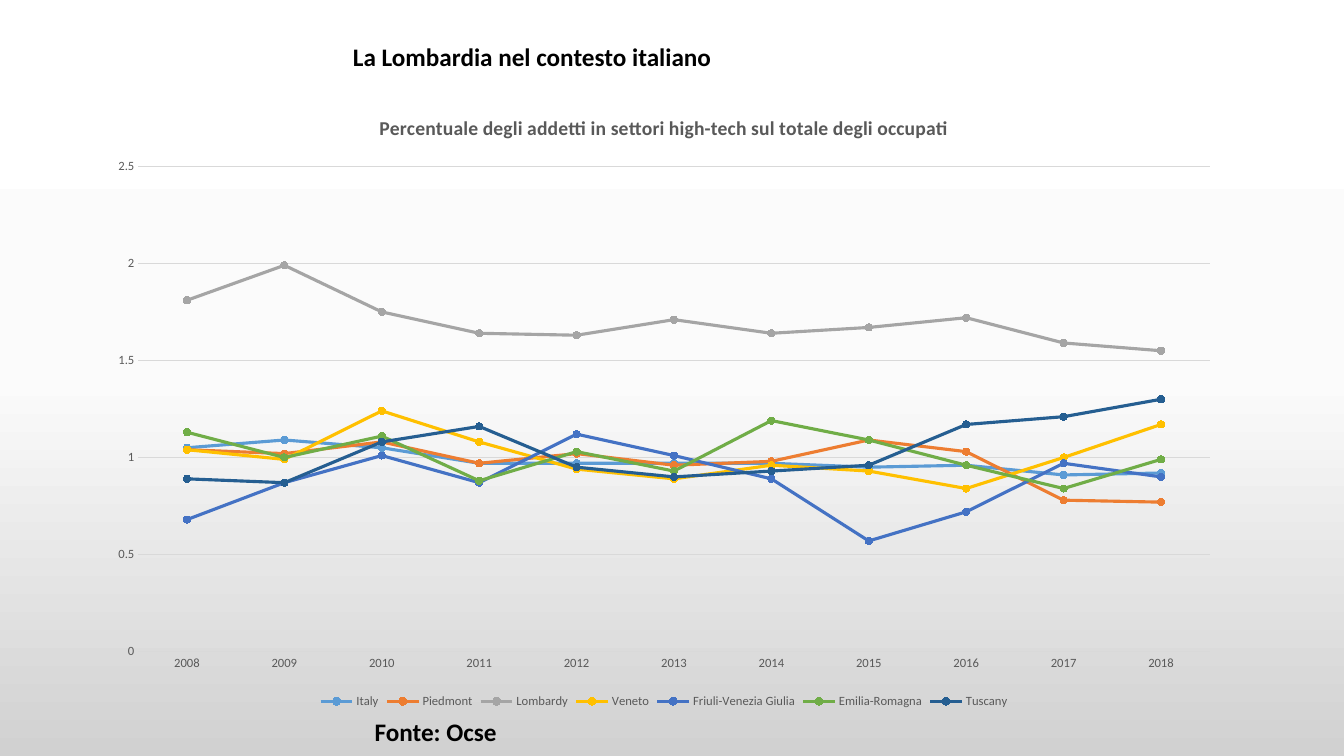
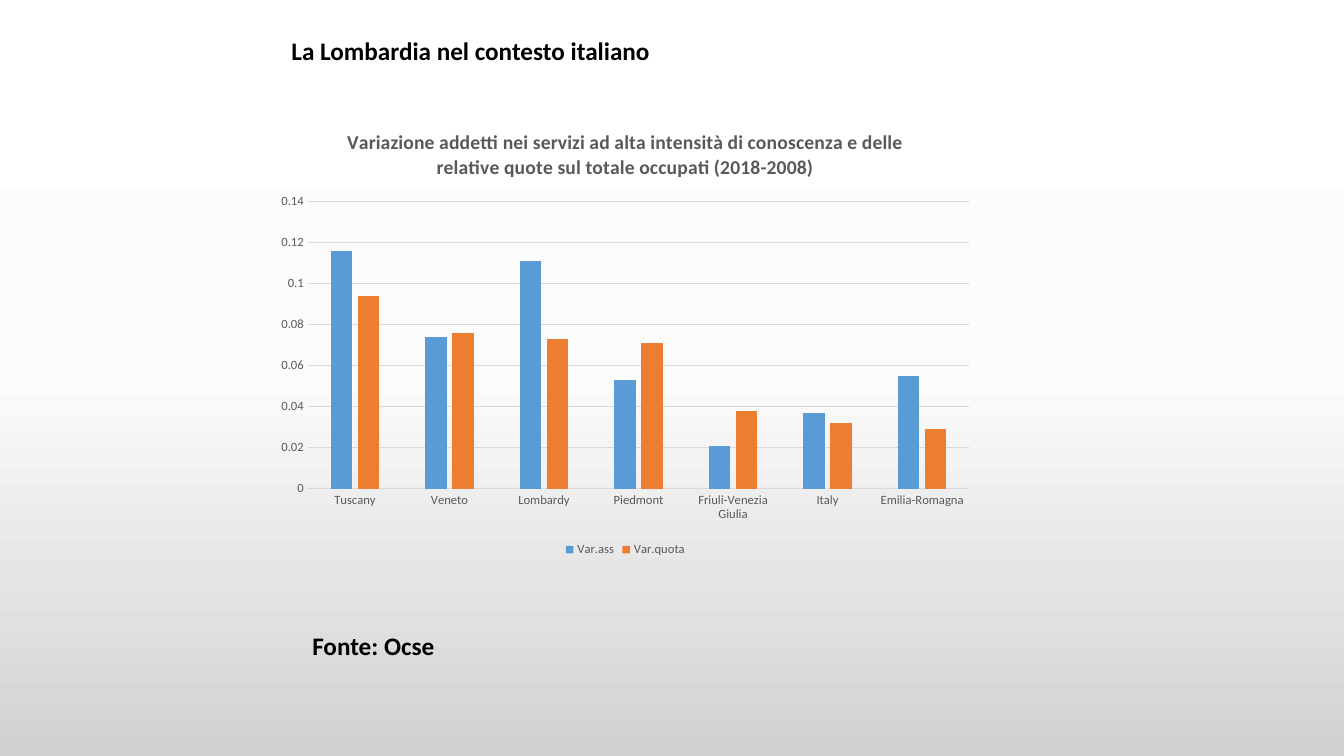
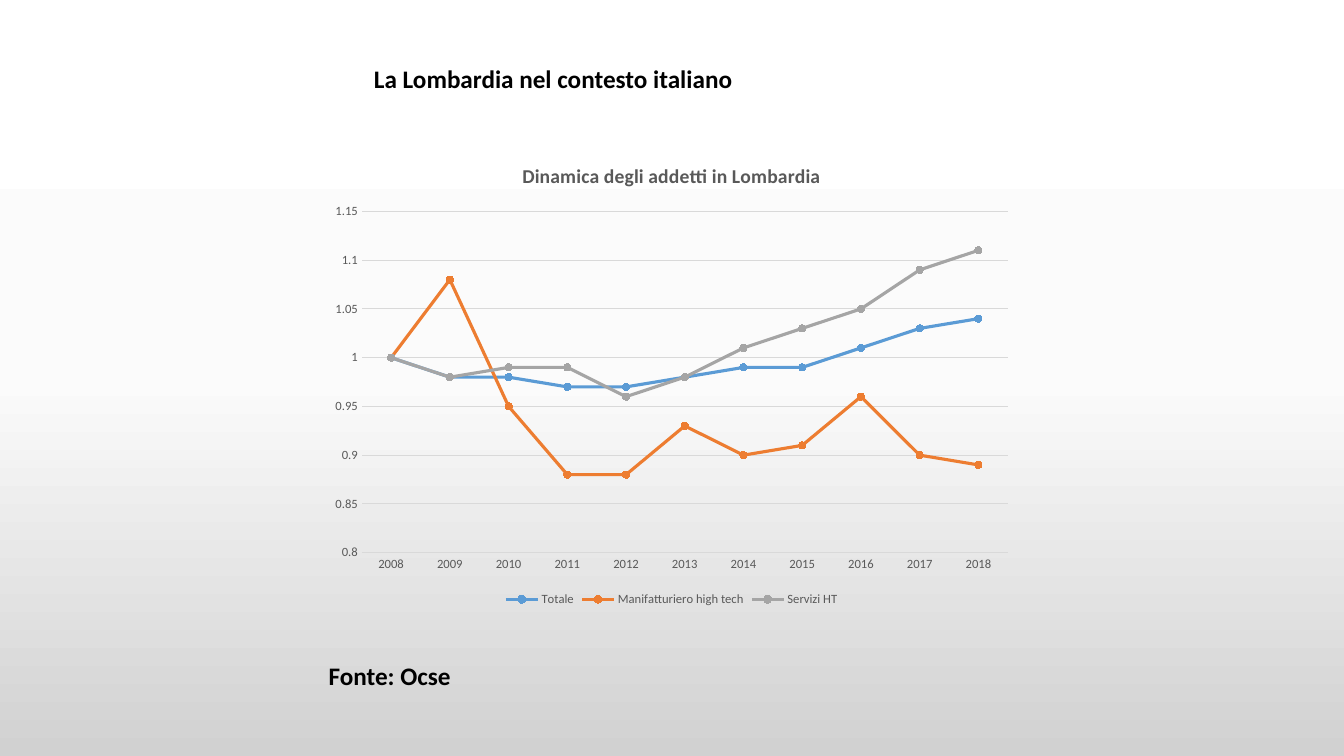
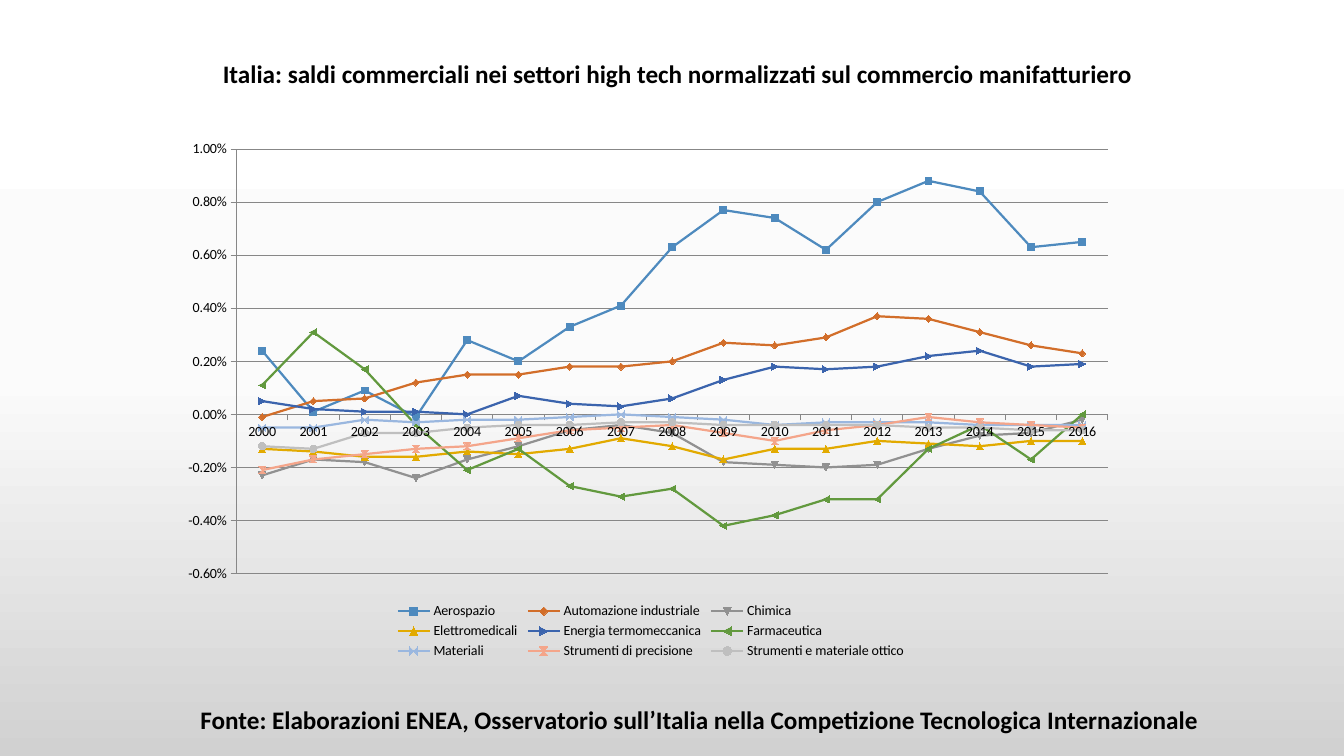
from dataclasses import dataclass

from lxml import etree
from pptx import Presentation
from pptx.chart.data import CategoryChartData
from pptx.dml.color import RGBColor as RGB
from pptx.enum.chart import XL_CHART_TYPE as ChartType
from pptx.enum.chart import XL_LEGEND_POSITION as LegendPos
from pptx.enum.chart import XL_MARKER_STYLE as Marker
from pptx.enum.chart import XL_TICK_MARK as Tick
from pptx.enum.text import MSO_ANCHOR, MSO_AUTO_SIZE, PP_ALIGN
from pptx.oxml import parse_xml
from pptx.oxml.ns import nsdecls, qn
from pptx.util import Cm, Pt


@dataclass(frozen=True)
class Theme:
    font: str = "Calibri"
    ink: str = "000000"
    heading_size: int = 18
    chart_title_size: int = 14
    text_height: float = 1.02
    background: tuple = ("FFFFFF", "FBFBFB", "D1D1D1")


@dataclass(frozen=True)
class ChartStyle:
    text: str
    size: int
    grid: str
    tick: Tick
    axis_line: bool     # whether the value axis shows its line
    line_width: float
    markers: bool       # round markers, or the automatic set
    colors: str


THEME = Theme()
LIGHT = ChartStyle("595959", 9, "D9D9D9", Tick.NONE, False, 2.25, True,
                   "5B9BD5 ED7D31 A5A5A5 FFC000 4472C4 70AD47 255E91")
CLASSIC = ChartStyle("000000", 10, "878787", Tick.OUTSIDE, True, 1.6, False,
                     "4E8ABE D26E2A 919191 E2AA00 3B64AD 62993E 9AB7DF F4A58A BFBFBF")

LOMBARDY_HEADING = "La Lombardia nel contesto italiano"
OECD_SOURCE = "Fonte: Ocse"
YEARS = [str(y) for y in range(2008, 2019)]

# Boxes in cm: heading and source are left, top, width; charts add the height.
# Each data row is a series name and its values.
SLIDES = [
    dict(
        heading=LOMBARDY_HEADING, heading_box=(8.64, 0.91, 13.3),
        source=OECD_SOURCE, source_box=(9.19, 17.93, 5),
        kind=ChartType.LINE_MARKERS, style=LIGHT, chart_box=(2.41, 2.34, 28.65, 15.62),
        title="Percentuale degli addetti in settori high-tech sul totale degli occupati",
        scale=(0, 2.5, 0.5), cats=YEARS,
        rows="""
            Italy: 1.05 1.09 1.05 0.97 0.97 0.97 0.97 0.95 0.96 0.91 0.92
            Piedmont: 1.04 1.02 1.08 0.97 1.02 0.96 0.98 1.09 1.03 0.78 0.77
            Lombardy: 1.81 1.99 1.75 1.64 1.63 1.71 1.64 1.67 1.72 1.59 1.55
            Veneto: 1.04 0.99 1.24 1.08 0.94 0.89 0.96 0.93 0.84 1 1.17
            Friuli-Venezia Giulia: 0.68 0.87 1.01 0.87 1.12 1.01 0.89 0.57 0.72 0.97 0.9
            Emilia-Romagna: 1.13 1 1.11 0.88 1.03 0.93 1.19 1.09 0.96 0.84 0.99
            Tuscany: 0.89 0.87 1.08 1.16 0.95 0.9 0.93 0.96 1.17 1.21 1.3
        """,
    ),
    dict(
        heading=LOMBARDY_HEADING, heading_box=(7.09, 0.76, 14.66),
        source=OECD_SOURCE, source_box=(7.62, 15.75, 5),
        kind=ChartType.COLUMN_CLUSTERED, style=LIGHT, chart_box=(6.73, 2.79, 18.06, 11.35),
        title="Variazione addetti nei servizi ad alta intensità di conoscenza e delle "
              "relative quote sul totale occupati (2018-2008)",
        scale=(0, 0.14, 0.02),
        cats=["Tuscany", "Veneto", "Lombardy", "Piedmont", "Friuli-Venezia Giulia",
              "Italy", "Emilia-Romagna"],
        rows="""
            Var.ass: 0.116 0.074 0.111 0.053 0.021 0.037 0.055
            Var.quota: 0.094 0.076 0.073 0.071 0.038 0.032 0.029
        """,
    ),
    dict(
        heading=LOMBARDY_HEADING, heading_box=(9.17, 1.47, 12.57),
        source=OECD_SOURCE, source_box=(8.03, 16.51, 5),
        kind=ChartType.LINE_MARKERS, style=LIGHT, chart_box=(8.1, 3.63, 17.65, 11.76),
        title="Dinamica degli addetti in Lombardia",
        scale=(0.8, 1.15, 0.05), cats=YEARS,
        rows="""
            Totale: 1 0.98 0.98 0.97 0.97 0.98 0.99 0.99 1.01 1.03 1.04
            Manifatturiero high tech: 1 1.08 0.95 0.88 0.88 0.93 0.9 0.91 0.96 0.9 0.89
            Servizi HT: 1 0.98 0.99 0.99 0.96 0.98 1.01 1.03 1.05 1.09 1.11
        """,
    ),
    dict(
        heading="Italia: saldi commerciali nei settori high tech normalizzati "
                "sul commercio manifatturiero",
        heading_box=(5.36, 1.35, 27.13),
        source="Fonte: Elaborazioni ENEA, Osservatorio sull’Italia nella "
               "Competizione Tecnologica Internazionale",
        source_box=(4.8, 17.63, 27),
        kind=ChartType.LINE_MARKERS, style=CLASSIC, chart_box=(4.27, 3.3, 24.16, 13.41),
        plot_area=(7, 3.4, 90.9, 79.8), legend_area=(23.2, 88, 54, 12), title=None,
        scale=(-0.006, 0.01, 0.002), number_format="0.00%",
        cats=[str(y) for y in range(2000, 2017)],
        divisor=10000,      # rows are in hundredths of a percent
        rows="""
            Aerospazio: 24 1 9 -1 28 20 33 41 63 77 74 62 80 88 84 63 65
            Automazione industriale: -1 5 6 12 15 15 18 18 20 27 26 29 37 36 31 26 23
            Chimica: -23 -17 -18 -24 -17 -12 -6 -4 -7 -18 -19 -20 -19 -13 -8 -7 -2
            Elettromedicali: -13 -14 -16 -16 -14 -15 -13 -9 -12 -17 -13 -13 -10 -11 -12 -10 -10
            Energia termomeccanica: 5 2 1 1 0 7 4 3 6 13 18 17 18 22 24 18 19
            Farmaceutica: 11 31 17 -4 -21 -13 -27 -31 -28 -42 -38 -32 -32 -13 -4 -17 0
            Materiali: -5 -5 -2 -3 -2 -2 -1 0 -1 -2 -4 -3 -3 -3 -4 -4 -4
            Strumenti di precisione: -21 -17 -15 -13 -12 -9 -6 -5 -4 -7 -10 -6 -4 -1 -3 -4 -5
            Strumenti e materiale ottico: -12 -13 -7 -7 -5 -4 -4 -3 -3 -4 -4 -4 -4 -5 -5 -6 -6
        """,
    ),
]


def set_font(font, size, color, bold=False):
    font.name, font.size, font.bold = THEME.font, Pt(size), bold
    font.color.rgb = RGB.from_string(color)


def set_layout(parent, index, area, inner=False):
    """Place a plot area or legend by hand, area in percent of the chart."""
    for old in parent.findall(qn("c:layout")):
        parent.remove(old)
    layout = parse_xml(f'<c:layout {nsdecls("c")}><c:manualLayout/></c:layout>')
    settings = [("layoutTarget", "inner")] if inner else []
    settings += [("xMode", "edge"), ("yMode", "edge")]
    settings += [(key, f"{v / 100:.3f}") for key, v in zip("xywh", area)]
    for key, value in settings:
        etree.SubElement(layout[0], qn(f"c:{key}")).set("val", value)
    parent.insert(index, layout)


prs = Presentation()
prs.slide_width, prs.slide_height = Cm(33.87), Cm(19.05)

# Shared background on the master
master = prs.slide_master
master.background.fill.gradient()
grad = master.element.find(".//" + qn("p:bgPr") + "/" + qn("a:gradFill"))
stops = "".join(f'<a:gs pos="{i * 50000}"><a:srgbClr val="{color}"/></a:gs>'
                for i, color in enumerate(THEME.background))
grad.getparent().replace(grad, parse_xml(
    f'<a:gradFill {nsdecls("a")} rotWithShape="1"><a:gsLst>{stops}</a:gsLst>'
    '<a:lin ang="5400000" scaled="0"/></a:gradFill>'))

for page in SLIDES:
    s = prs.slides.add_slide(prs.slide_layouts[5])
    style = page["style"]
    number_format = page.get("number_format", "General")

    # Chart
    data = CategoryChartData(number_format=number_format)
    data.categories = page["cats"]
    for row in page["rows"].strip().splitlines():
        name, values = row.strip().split(": ")
        data.add_series(name, [float(v) / page.get("divisor", 1) for v in values.split()])
    chart = s.shapes.add_chart(page["kind"], *map(Cm, page["chart_box"]), data).chart
    plot = chart.plots[0]
    set_font(chart.font, style.size, style.text)
    chart.has_title = page["title"] is not None
    if chart.has_title:
        p = chart.chart_title.text_frame.paragraphs[0]
        p.text = page["title"]
        set_font(p.font, THEME.chart_title_size, style.text, bold=True)
        chart.chart_title.include_in_layout = False

    # Legend
    chart.has_legend = True
    chart.legend.position = LegendPos.BOTTOM
    chart.legend.include_in_layout = False
    set_font(chart.legend.font, style.size, style.text)
    if "legend_area" in page:
        set_layout(chart.legend._element, 1, page["legend_area"])
        set_layout(plot._element.getparent(), 0, page["plot_area"], inner=True)

    # Axes
    cat_axis, val_axis = chart.category_axis, chart.value_axis
    val_axis.minimum_scale, val_axis.maximum_scale, val_axis.major_unit = page["scale"]
    val_axis.has_major_gridlines = True
    val_axis.tick_labels.number_format = number_format
    val_axis.tick_labels.number_format_is_linked = False
    for axis in (cat_axis, val_axis):
        axis.major_tick_mark, axis.minor_tick_mark = style.tick, Tick.NONE
        set_font(axis.tick_labels.font, style.size, style.text)
    for part in (cat_axis, val_axis, val_axis.major_gridlines):
        part.format.line.color.rgb = RGB.from_string(style.grid)
        part.format.line.width = Pt(0.75)
    if not style.axis_line:
        val_axis.format.line.fill.background()

    # Series
    plot.vary_by_categories = False
    is_column = page["kind"] == ChartType.COLUMN_CLUSTERED
    if is_column:
        plot.gap_width, plot.overlap = 219, -27
    for series, color in zip(plot.series, style.colors.split()):
        rgb = RGB.from_string(color)
        if is_column:
            series.format.fill.solid()
            series.format.fill.fore_color.rgb = rgb
            continue
        series.smooth = False
        series.format.line.color.rgb, series.format.line.width = rgb, Pt(style.line_width)
        if style.markers:
            series.marker.style, series.marker.size = Marker.CIRCLE, 5
            series.marker.format.fill.solid()
            series.marker.format.fill.fore_color.rgb = rgb
            series.marker.format.line.color.rgb = rgb

    # Heading and source
    source = s.shapes.add_textbox(0, 0, 0, 0)
    for sp, part in ((s.shapes.title, "heading"), (source, "source")):
        sp.left, sp.top, sp.width = map(Cm, page[part + "_box"])
        sp.height = Cm(THEME.text_height)
        tf = sp.text_frame
        tf.word_wrap, tf.auto_size = True, MSO_AUTO_SIZE.NONE
        tf.vertical_anchor = MSO_ANCHOR.TOP
        p = tf.paragraphs[0]
        p.text, p.alignment = page[part], PP_ALIGN.LEFT
        set_font(p.font, THEME.heading_size, THEME.ink, bold=True)

prs.save("out.pptx")
